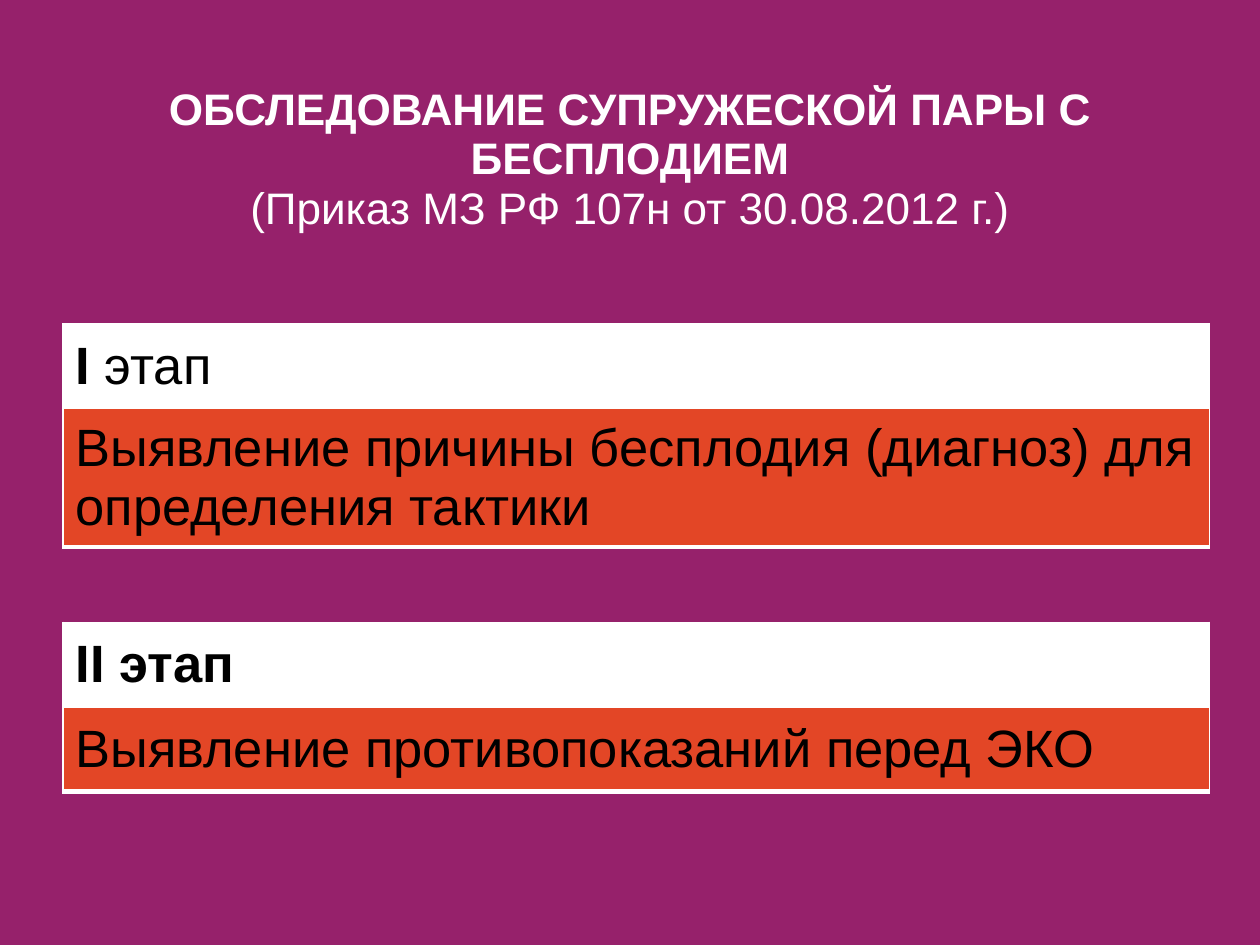
from lxml import etree
from pptx import Presentation
from pptx import util as u
from pptx.dml.color import RGBColor
from pptx.enum import text
from pptx.oxml import ns

PLUM = RGBColor(0x96, 0x21, 0x6B)
ORANGE = RGBColor(0xE3, 0x46, 0x26)
WHITE = RGBColor(0xFF, 0xFF, 0xFF)
BLACK = RGBColor(0, 0, 0)
BORDERS = {"lnL": 1, "lnR": 1, "lnT": 1, "lnB": 3}  # points


class StageSlide:
    """Style and current slide; lengths are shares of the slide's size."""

    font = "Arial"

    def __init__(self, deck):
        self.width, self.height = deck.slide_width, deck.slide_height
        self.slide = deck.slides.add_slide(deck.slide_layouts[6])
        self.slide.background.fill.solid()
        self.slide.background.fill.fore_color.rgb = PLUM

    def place(self, left, top, width, height):
        return (int(left * self.width), int(top * self.height),
                int(width * self.width), int(height * self.height))

    def style(self, paragraph, size, color):
        paragraph.font.name = self.font
        paragraph.font.size = u.Pt(size)
        paragraph.font.color.rgb = color

    def add_words(self, paragraph, words, bold):
        run = paragraph.add_run()
        run.text = words
        run.font.bold = bold

    def title(self, heading, source, *box):
        frame = self.slide.shapes.add_textbox(*self.place(*box)).text_frame
        frame.word_wrap = True
        frame.vertical_anchor = text.MSO_ANCHOR.MIDDLE
        line = frame.paragraphs[0]
        line.alignment = text.PP_ALIGN.CENTER
        line.line_spacing = 0.93
        self.style(line, 25.2, WHITE)
        self.add_words(line, heading, True)
        line.add_line_break()
        self.add_words(line, source, False)

    def band(self, parts, fill, *box):
        """One-cell table; parts are (words, bold) pairs."""
        table = self.slide.shapes.add_table(1, 1, *self.place(*box)).table
        cell = table.cell(0, 0)
        cell.vertical_anchor = text.MSO_ANCHOR.MIDDLE
        line = cell.text_frame.paragraphs[0]
        self.style(line, 30, BLACK)
        for words, bold in parts:
            self.add_words(line, words, bold)
        self.border(cell)
        cell.fill.solid()
        cell.fill.fore_color.rgb = fill

    def border(self, cell):
        properties = cell._tc.get_or_add_tcPr()
        for side, points in BORDERS.items():
            edge = etree.SubElement(properties, ns.qn(f"a:{side}"), w=str(u.Pt(points)))
            solid = etree.SubElement(edge, ns.qn("a:solidFill"))
            etree.SubElement(solid, ns.qn("a:srgbClr"), val=str(WHITE))


def main():
    deck = Presentation()
    deck.slide_width, deck.slide_height = u.Inches(10), u.Inches(7.5)
    page = StageSlide(deck)

    page.title("ОБСЛЕДОВАНИЕ СУПРУЖЕСКОЙ ПАРЫ С БЕСПЛОДИЕМ",
               "(Приказ МЗ РФ 107н от 30.08.2012 г.)",
               0.03, 0.68 / 7.5, 0.94, 1.18 / 7.5)

    # Each stage: top, name, goal and height of the goal band, in inches
    row = 0.67
    stages = [
        (2.57, [("I ", True), ("этап", False)],
         "Выявление причины бесплодия (диагноз) для определения тактики", 1.03),
        (4.94, [("II этап", True)],
         "Выявление противопоказаний перед ЭКО", row),
    ]
    for top, name, goal, goal_height in stages:
        page.band(name, WHITE, 0.05, top / 7.5, 0.91, row / 7.5)
        page.band([(goal, False)], ORANGE,
                  0.05, (top + row) / 7.5, 0.91, goal_height / 7.5)

    deck.save("out.pptx")


if __name__ == "__main__":
    main()
